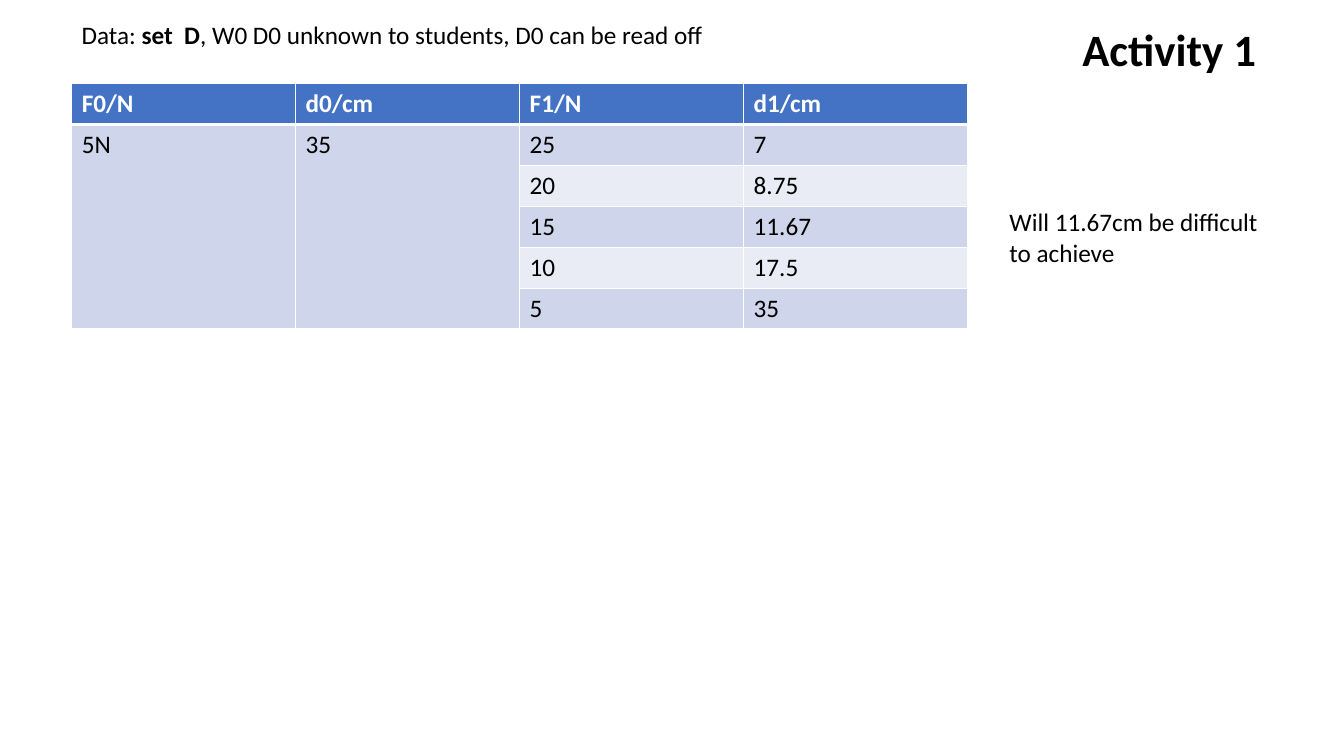
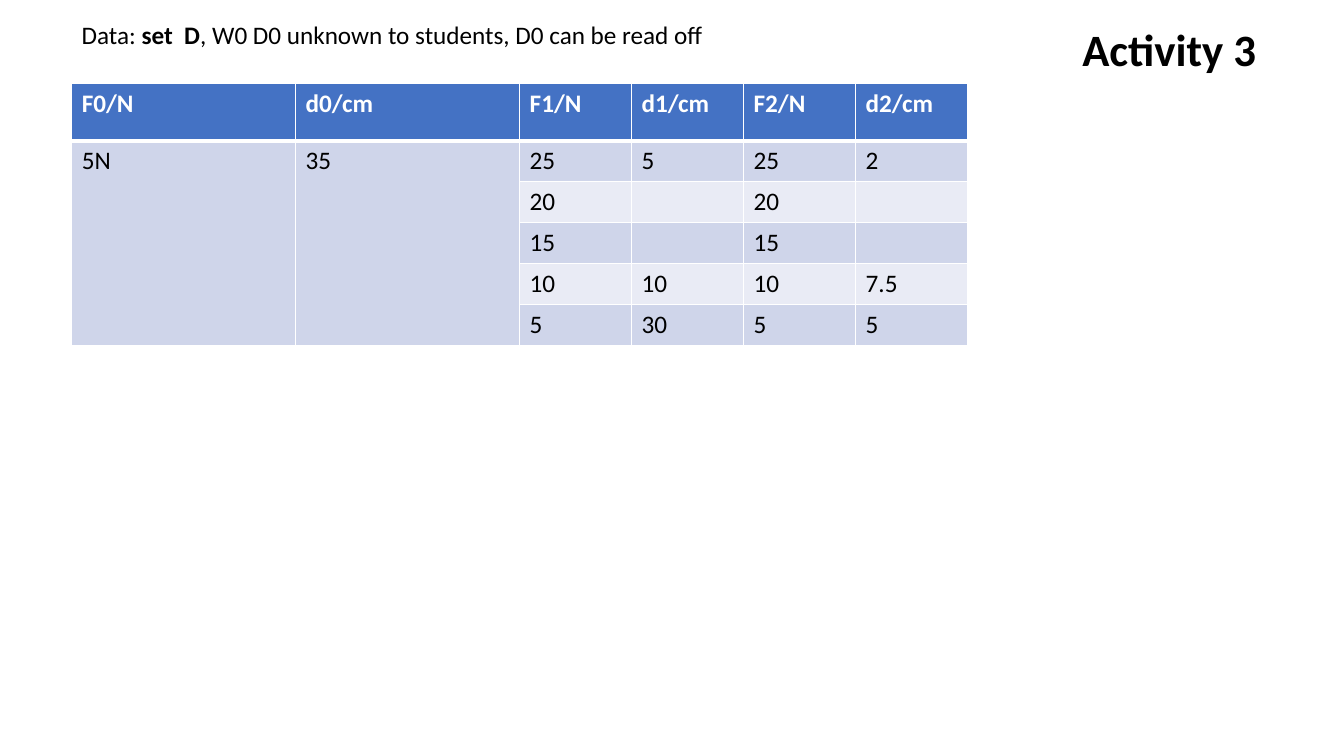
from dataclasses import dataclass

from lxml import etree
from pptx import Presentation
from pptx.dml.color import RGBColor
from pptx.enum.text import MSO_AUTO_SIZE
from pptx.oxml.ns import qn
from pptx.util import Pt

GROW = MSO_AUTO_SIZE.SHAPE_TO_FIT_TEXT


# Shared look
@dataclass(frozen=True)
class Theme:
    font: str = "Calibri"
    ink: str = "000000"
    white: str = "FFFFFF"
    header: str = "4472C4"
    bands: tuple = ("CFD5EA", "E9EBF5")
    body_size: float = 18
    title_size: float = 32
    thin: float = 1
    thick: float = 3


THEME = Theme()

# Content: lists of (text, bold) for mixed formats
DATA_LINE = [("Data: ", False), ("set  D", True),
             (", W0 D0 unknown to students, D0 can be read off", False)]
START = ["5N", "35"]  # merged down all body rows
SLIDES = [
    {
        "title": "Activity 1",
        "header": ["F0/N", "d0/cm", "F1/N", "d1/cm"],
        "readings": [["25", "7"], ["20", "8.75"], ["15", "11.67"],
                     ["10", "17.5"], ["5", "35"]],
        "header_height": 29.2,
        "question": "Will 11.67cm be difficult to achieve",
    },
    {
        "title": "Activity 3",
        "header": ["F0/N", "d0/cm", "F1/N", "d1/cm", "F2/N", "d2/cm"],
        "readings": [["25", "5", "25", "2"], ["20", "", "20", ""],
                     ["15", "", "15", ""], ["10", "10", "10", "7.5"],
                     ["5", "30", "5", "5"]],
        "header_height": 40.8,
    },
]

# Places: left, top, width, height
DATA_BOX = (51.2, 10.2, 464.4, 29)
TITLE_BOX = (766, 12.2, 154, 46)
QUESTION_BOX = (714, 144, 205, 51)
TABLE_LEFT, TABLE_TOP, TABLE_WIDTH = 51.2, 59.8, 640
ROW_HEIGHT = 29.2


def write(frame, spans, size=THEME.body_size, color=THEME.ink):
    para = frame.paragraphs[0]
    for text, bold in spans:
        span = para.add_run()
        span.text = text
        span.font.name = THEME.font
        span.font.size = Pt(size)
        span.font.bold = bold
        span.font.color.rgb = RGBColor.from_string(color)


def add_text(page, place, spans, **style):
    box = page.shapes.add_textbox(*map(Pt, place))
    box.text_frame.word_wrap = True
    box.text_frame.auto_size = GROW
    write(box.text_frame, spans, **style)


def set_borders(cell, **widths):
    properties = cell._tc.get_or_add_tcPr()
    for side in "LRTB":
        width = Pt(widths.get(side, THEME.thin))
        line = etree.SubElement(properties, qn(f"a:ln{side}"), w=str(width))
        fill = etree.SubElement(line, qn("a:solidFill"))
        etree.SubElement(fill, qn("a:srgbClr"), val=THEME.white)


def add_data_table(page, header, readings, header_height):
    blanks = [""] * len(START)
    rows = [header] + [(blanks if i else START) + reading
                       for i, reading in enumerate(readings)]
    heights = [header_height] + [ROW_HEIGHT] * len(readings)
    # The start columns take half the width, the readings share the rest
    half = TABLE_WIDTH / 2
    count = len(header) - len(START)
    widths = [half / len(START)] * len(START) + [half / count] * count

    table = page.shapes.add_table(
        len(rows), len(header), Pt(TABLE_LEFT), Pt(TABLE_TOP),
        Pt(TABLE_WIDTH), Pt(sum(heights))).table
    for column, width in zip(table.columns, widths):
        column.width = Pt(width)
    for row, height in zip(table.rows, heights):
        row.height = Pt(height)
    for column in range(len(START)):
        table.cell(1, column).merge(table.cell(len(readings), column))

    for r, texts in enumerate(rows):
        is_header = r == 0
        fill = THEME.header if is_header else THEME.bands[(r - 1) % 2]
        edge = {0: {"B": THEME.thick}, 1: {"T": THEME.thick}}.get(r, {})
        for c, text in enumerate(texts):
            cell = table.cell(r, c)
            set_borders(cell, **edge)
            cell.fill.solid()
            cell.fill.fore_color.rgb = RGBColor.from_string(fill)
            if text:
                write(cell.text_frame, [(text, is_header)],
                      color=THEME.white if is_header else THEME.ink)


def main():
    deck = Presentation()
    deck.slide_width, deck.slide_height = Pt(960), Pt(540)
    for content in SLIDES:
        page = deck.slides.add_slide(deck.slide_layouts[6])
        add_text(page, DATA_BOX, DATA_LINE)
        add_data_table(page, content["header"], content["readings"],
                       content["header_height"])
        if "question" in content:
            add_text(page, QUESTION_BOX, [(content["question"], False)])
        add_text(page, TITLE_BOX, [(content["title"], True)],
                 size=THEME.title_size)
    deck.save("out.pptx")


if __name__ == "__main__":
    main()
